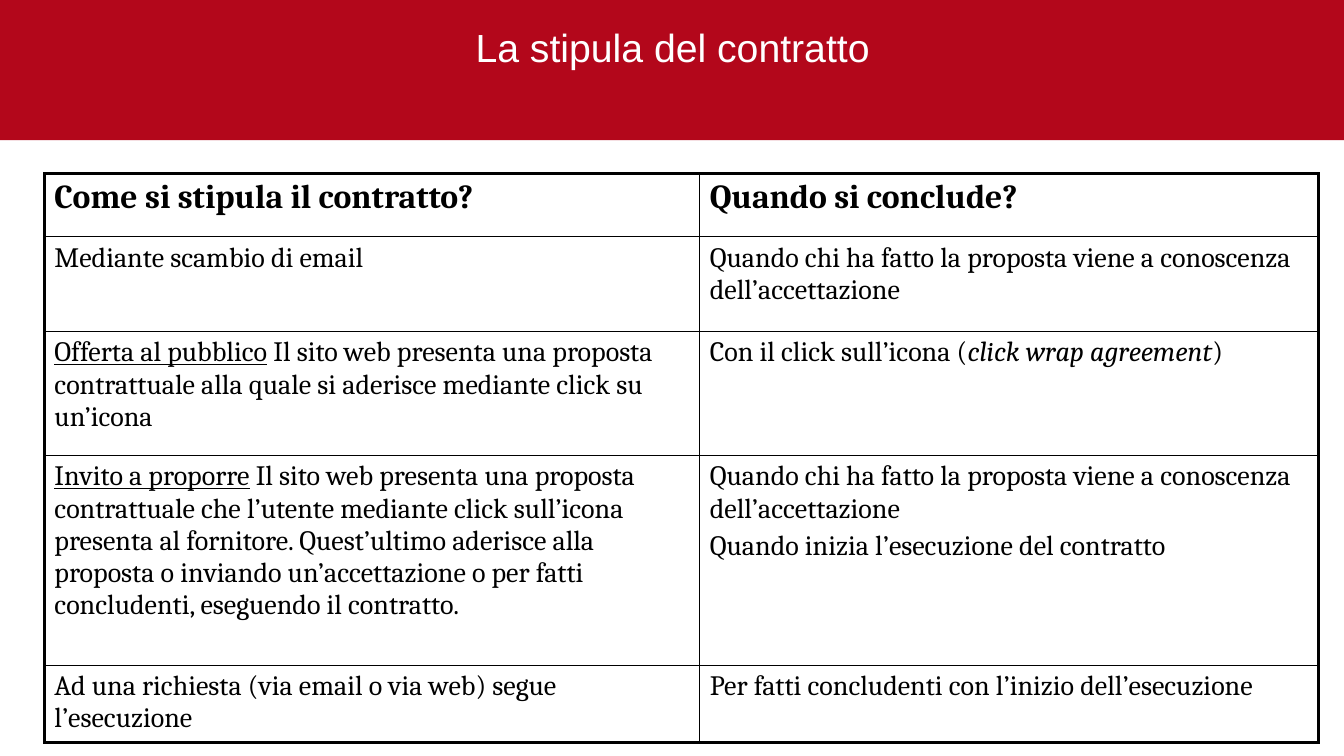
from lxml import etree
from pptx import Presentation
from pptx.dml.color import RGBColor
from pptx.enum.shapes import MSO_SHAPE
from pptx.enum.text import MSO_ANCHOR, PP_ALIGN
from pptx.oxml.ns import qn
from pptx.util import Emu, Pt

RECTANGLE = MSO_SHAPE.RECTANGLE
MIDDLE = MSO_ANCHOR.MIDDLE
CENTER = PP_ALIGN.CENTER

RED = RGBColor(0xB3, 0x07, 0x1B)
WHITE = RGBColor(0xFF, 0xFF, 0xFF)
BLACK = RGBColor(0x00, 0x00, 0x00)

EMU_PER_PX = 9144
BLANK_LAYOUT = 6
THIN, THICK = 1, 2.25

COLUMNS = [650, 614]
ROWS = [63, 94, 123, 208, 73]
ON_ACCEPTANCE = [("Quando chi ha fatto la proposta viene a conoscenza dell’accettazione", "")]
CONTRACTS = [
    [
        [[("Come si stipula il contratto?", "bold")]],
        [[("Quando si conclude?", "bold")]],
    ],
    [
        [[("Mediante scambio di email", "")]],
        [ON_ACCEPTANCE],
    ],
    [
        [[("Offerta al pubblico", "underline"),
          (" Il sito web presenta una proposta contrattuale alla quale si aderisce "
           "mediante click su un’icona", "")]],
        [[("Con il click sull’icona (", ""), ("click wrap agreement", "italic"), (")", "")]],
    ],
    [
        [[("Invito a proporre", "underline"),
          (" Il sito web presenta una proposta contrattuale che l’utente mediante click "
           "sull’icona presenta al fornitore. Quest’ultimo aderisce alla proposta o inviando "
           "un’accettazione o per fatti concludenti, eseguendo il contratto.", "")]],
        [ON_ACCEPTANCE, [("Quando inizia l’esecuzione del contratto", "")]],
    ],
    [
        [[("Ad una richiesta (via email o via web) segue l’esecuzione", "")]],
        [[("Per fatti concludenti con l’inizio dell’esecuzione", "")]],
    ],
]


def px(length):
    return Emu(length * EMU_PER_PX)


class SlideBuilder:
    title_font = "Arial"
    table_font = "Cambria"
    title_size = 28
    header_size = 24
    body_size = 20

    def __init__(self, page):
        self.page = page

    def add_span(self, para, text, font, size, color, style=""):
        span = para.add_run()
        span.text = text
        span.font.name = font
        span.font.size = Pt(size)
        span.font.color.rgb = color
        span.font.bold = style == "bold"
        span.font.italic = style == "italic"
        span.font.underline = style == "underline"

    def add_banner(self, left, top, width, height):
        banner = self.page.shapes.add_shape(
            RECTANGLE, px(left), px(top), px(width), px(height))
        banner.shadow.inherit = False
        banner.fill.solid()
        banner.fill.fore_color.rgb = RED
        banner.line.fill.background()

    def add_title(self, text, left, top, width, height):
        box = self.page.shapes.add_textbox(px(left), px(top), px(width), px(height))
        frame = box.text_frame
        frame.word_wrap = True
        frame.vertical_anchor = MIDDLE
        para = frame.paragraphs[0]
        para.alignment = CENTER
        self.add_span(para, text, self.title_font, self.title_size, WHITE)

    def add_borders(self, cell, widths):
        properties = cell._tc.get_or_add_tcPr()
        for index, (side, width) in enumerate(widths.items()):
            border = etree.Element(qn(f"a:ln{side}"), w=str(Pt(width)))
            fill = etree.SubElement(border, qn("a:solidFill"))
            etree.SubElement(fill, qn("a:srgbClr"), val=str(BLACK))
            properties.insert(index, border)

    def fill_cell(self, cell, paragraphs, size):
        cell.fill.background()
        frame = cell.text_frame
        for index, spans in enumerate(paragraphs):
            para = frame.add_paragraph() if index else frame.paragraphs[0]
            if index:
                para.space_before = Pt(size * 0.2)
            for text, style in spans:
                self.add_span(para, text, self.table_font, size, BLACK, style)

    def add_table(self, content, left, top, columns, rows):
        table = self.page.shapes.add_table(
            len(rows), len(columns), px(left), px(top), px(sum(columns)), px(sum(rows))).table
        table.first_row = False
        table.horz_banding = False
        for column, width in zip(table.columns, columns):
            column.width = px(width)
        last_row, last_column = len(rows) - 1, len(columns) - 1
        for row, height in enumerate(rows):
            table.rows[row].height = px(height)
            size = self.body_size if row else self.header_size
            for column, paragraphs in enumerate(content[row]):
                cell = table.cell(row, column)
                self.fill_cell(cell, paragraphs, size)
                self.add_borders(cell, {
                    "L": THIN if column else THICK,
                    "R": THICK if column == last_column else THIN,
                    "T": THIN if row else THICK,
                    "B": THICK if row == last_row else THIN,
                })


def main():
    deck = Presentation()
    deck.slide_width = px(1333)
    deck.slide_height = px(750)
    page = deck.slides.add_slide(deck.slide_layouts[BLANK_LAYOUT])
    builder = SlideBuilder(page)
    builder.add_banner(-11, -11, 1370, 150)
    builder.add_title("La stipula del contratto", 242, 25, 850, 42)
    builder.add_table(CONTRACTS, 44, 172, COLUMNS, ROWS)
    deck.save("out.pptx")


if __name__ == "__main__":
    main()
